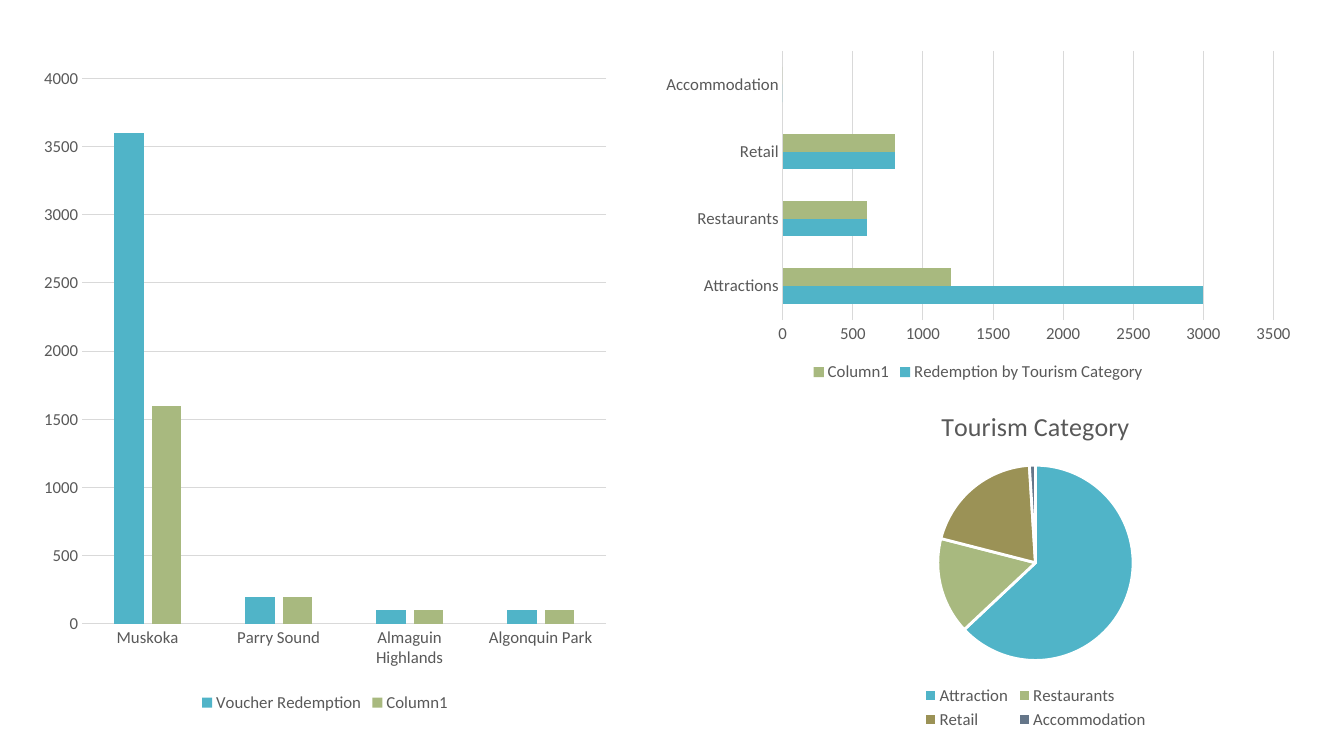
from lxml.etree import SubElement
from pptx import Presentation
from pptx.chart.data import CategoryChartData
from pptx.dml.color import RGBColor
from pptx.enum.chart import XL_CHART_TYPE, XL_LEGEND_POSITION, XL_TICK_MARK
from pptx.oxml.ns import qn
from pptx.util import Pt

TEAL = RGBColor(0x50, 0xB4, 0xC8)
GREEN = RGBColor(0xA8, 0xB9, 0x7F)
OLIVE = RGBColor(0x9B, 0x92, 0x56)
SLATE = RGBColor(0x65, 0x76, 0x89)
TEXT_GREY = RGBColor(0x59, 0x59, 0x59)
LINE_GREY = RGBColor(0xD9, 0xD9, 0xD9)
WHITE = RGBColor(0xFF, 0xFF, 0xFF)
FONT_NAME = "Calibri"

presentation = Presentation()
presentation.slide_width = Pt(960)
presentation.slide_height = Pt(540)
slide = presentation.slides.add_slide(presentation.slide_layouts[6])


def add_styled_chart(chart_type, box, plot_box, categories, series):
    """Add a chart; box and plot_box are left, top, width, height on the slide."""
    data = CategoryChartData()
    data.categories = categories
    for name, values in series:
        data.add_series(name, values)
    lengths = [Pt(length) for length in box]
    chart = slide.shapes.add_chart(chart_type, *lengths, data).chart
    chart.font.size = Pt(12)
    chart.font.name = FONT_NAME
    chart.font.color.rgb = TEXT_GREY
    chart.has_title = False
    chart.has_legend = True
    chart.legend.position = XL_LEGEND_POSITION.BOTTOM
    chart.legend.include_in_layout = False

    plot_area = chart.element.find(".//" + qn("c:plotArea"))
    layout = plot_area.find(qn("c:layout"))
    if layout is None:
        layout = SubElement(plot_area, qn("c:layout"))
        plot_area.insert(0, layout)
    manual = SubElement(layout, qn("c:manualLayout"))
    left, top, width, height = box
    plot_left, plot_top, plot_width, plot_height = plot_box
    settings = {
        "layoutTarget": "inner",
        "xMode": "edge",
        "yMode": "edge",
        "x": (plot_left - left) / width,
        "y": (plot_top - top) / height,
        "w": plot_width / width,
        "h": plot_height / height,
    }
    for tag, value in settings.items():
        SubElement(manual, qn("c:" + tag)).set("val", str(value))
    return chart


def style_bars(chart, gap_width, overlap, maximum):
    plot = chart.plots[0]
    plot.gap_width = gap_width
    plot.overlap = overlap
    plot.vary_by_categories = False
    for series, color in zip(plot.series, (TEAL, GREEN)):
        series.format.fill.solid()
        series.format.fill.fore_color.rgb = color
    for axis in (chart.category_axis, chart.value_axis):
        axis.major_tick_mark = XL_TICK_MARK.NONE
        axis.minor_tick_mark = XL_TICK_MARK.NONE
    value_axis = chart.value_axis
    value_axis.minimum_scale = 0
    value_axis.maximum_scale = maximum
    value_axis.major_unit = 500
    value_axis.has_major_gridlines = True
    value_axis.format.line.fill.background()
    for line in (chart.category_axis.format.line, value_axis.major_gridlines.format.line):
        line.color.rgb = LINE_GREY
        line.width = Pt(0.75)


region_chart = add_styled_chart(
    XL_CHART_TYPE.COLUMN_CLUSTERED,
    (23, 39.6, 418.3, 472.3),
    (58.7, 55.9, 374.3, 389.8),
    ["Muskoka", "Parry Sound", "Almaguin Highlands", "Algonquin Park"],
    [("Voucher Redemption", (3600, 200, 100, 100)), ("Column1", (1600, 200, 100, 100))],
)
style_bars(region_chart, 219, -27, 4000)

category_chart = add_styled_chart(
    XL_CHART_TYPE.BAR_CLUSTERED,
    (466.6, 31.7, 464.4, 244.1),
    (559.1, 36.4, 350.6, 192),
    ["Attractions", "Restaurants", "Retail", "Accommodation"],
    [
        ("Redemption by Tourism Category", (3000, 600, 800, 0)),
        ("Column1", (1200, 600, 800, 0)),
    ],
)
style_bars(category_chart, 182, 0, 3500)

share_chart = add_styled_chart(
    XL_CHART_TYPE.PIE,
    (545, 279.4, 389.5, 244.8),
    (669.9, 332.3, 139.5, 139.5),
    ["Attraction", "Restaurants", "Retail", "Accommodation"],
    [("Tourism Category", (63, 16, 20, 1))],
)
share_chart.has_title = True
title_run = share_chart.chart_title.text_frame.paragraphs[0].add_run()
title_run.text = "Tourism Category"
title_run.font.size = Pt(18.6)
title_run.font.name = FONT_NAME
title_run.font.bold = False
title_run.font.color.rgb = TEXT_GREY
share_chart.plots[0].vary_by_categories = True
for index, color in enumerate((TEAL, GREEN, OLIVE, SLATE)):
    point_format = share_chart.plots[0].series[0].points[index].format
    point_format.fill.solid()
    point_format.fill.fore_color.rgb = color
    point_format.line.color.rgb = WHITE
    point_format.line.width = Pt(2)

presentation.save("out.pptx")
